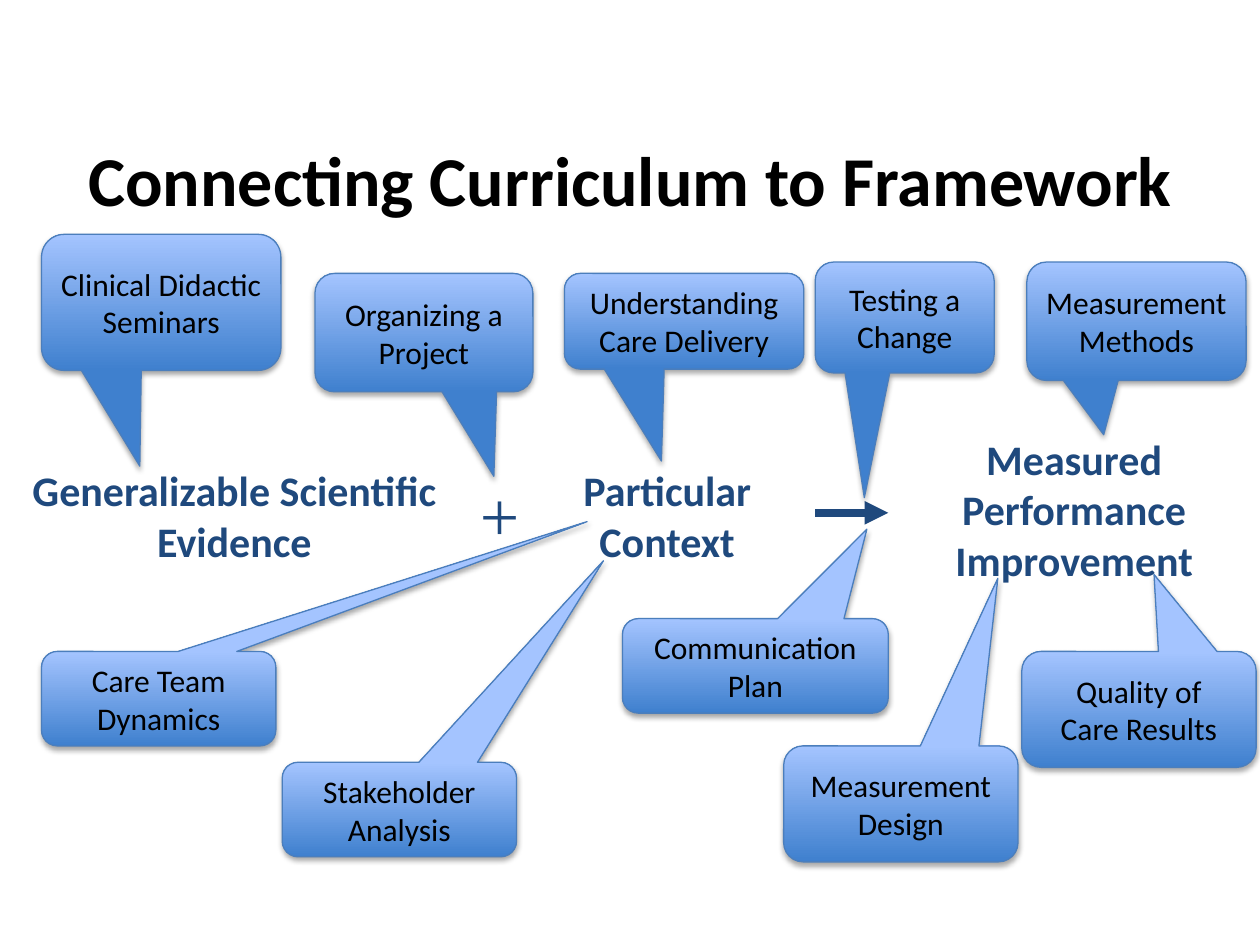
from lxml.etree import SubElement
from pptx import Presentation
from pptx.dml.color import RGBColor
from pptx.enum.shapes import MSO_CONNECTOR, MSO_SHAPE
from pptx.enum.text import MSO_ANCHOR, PP_ALIGN
from pptx.oxml.ns import qn
from pptx.util import Inches, Pt

NAVY, BLACK = "1F497D", "000000"
CALLOUT_BOTTOM, CALLOUT_TOP, CALLOUT_EDGE = "3F80CE", "A4C4FF", "4B7EBC"

# text, left, top, width, height, pointer tip
CALLOUTS = [
    ("Testing a\nChange", 6.47, 2.08, 1.42, 0.88, (6.86, 3.95)),
    ("Measurement Design", 6.22, 5.92, 1.86, 0.92, (7.92, 4.59)),
    ("Quality of\nCare Results", 8.11, 5.17, 1.86, 0.92, (9.16, 4.56)),
    ("Measurement\nMethods", 8.15, 2.08, 1.74, 0.94, (8.76, 3.45)),
    ("Organizing a\nProject", 2.5, 2.17, 1.73, 0.94, (3.92, 3.78)),
    ("Clinical Didactic\nSeminars", 0.33, 1.86, 1.9, 1.08, (1.11, 3.7)),
    ("Understanding\nCare Delivery", 4.48, 2.17, 1.9, 0.76, (5.25, 3.66)),
    ("Stakeholder\nAnalysis", 2.24, 6.05, 1.86, 0.75, (4.79, 4.45)),
    ("Care Team\nDynamics", 0.33, 5.17, 1.86, 0.75, (4.66, 4.14)),
    ("Communication\nPlan", 4.94, 4.91, 2.11, 0.75, (6.88, 4.2)),
]


def rgb(color):
    return RGBColor.from_string(color)


def write(frame, text, size, color, bold=False, font="Calibri", align=PP_ALIGN.CENTER):
    frame.text = text
    for paragraph in frame.paragraphs:
        paragraph.alignment = align
        paragraph.font.name = font
        paragraph.font.size = Pt(size)
        paragraph.font.bold = bold
        paragraph.font.color.rgb = rgb(color)


def add_title(slide, left, top, width, height):
    title = slide.shapes.title
    title.left, title.top = Inches(left), Inches(top)
    title.width, title.height = Inches(width), Inches(height)
    title.text_frame.vertical_anchor = MSO_ANCHOR.MIDDLE
    write(title.text_frame, "Connecting Curriculum to Framework", 40, BLACK, bold=True)


def add_term(shapes, text, left, top, width, height, wrap=True, size=24, **style):
    term = shapes.add_textbox(Inches(left), Inches(top), Inches(width), Inches(height))
    term.text_frame.word_wrap = wrap
    write(term.text_frame, text, size, NAVY, **style)


def add_arrow(shapes, left, right, y):
    arrow = shapes.add_connector(
        MSO_CONNECTOR.STRAIGHT, Inches(left), Inches(y), Inches(right), Inches(y))
    arrow.line.color.rgb = rgb(NAVY)
    arrow.line.width = Pt(4.5)
    SubElement(arrow.line._get_or_add_ln(), qn("a:tailEnd"), type="triangle")
    SubElement(arrow._element.spPr, qn("a:effectLst"))


def add_framework(slide, left, top):
    """Equation: evidence + context -> improvement."""
    shapes = slide.shapes.add_group_shape().shapes
    middle = top + 0.25
    add_term(shapes, "Generalizable Scientific Evidence", left, middle, 3.58, 0.91, bold=True)
    add_term(shapes, "+", left + 3.64, top + 0.3, 0.52, 0.78, wrap=False, size=40,
             font="Times New Roman", align=PP_ALIGN.LEFT)
    add_term(shapes, "Particular\nContext", left + 4.45, middle, 1.55, 0.91,
             wrap=False, bold=True)
    add_arrow(shapes, left + 6.4, left + 6.98, top + 0.68)
    add_term(shapes, "Measured Performance\nImprovement", left + 7.08, top, 2.75, 1.31,
             bold=True)


def add_shadow(shape):
    shape.shadow.inherit = False
    effects = shape._element.spPr.find(qn("a:effectLst"))
    shadow = SubElement(effects, qn("a:outerShdw"), blurRad=str(Pt(3.1)),
                        dist=str(Pt(1.8)), dir="5400000", rotWithShape="0")
    color = SubElement(shadow, qn("a:srgbClr"), val=BLACK)
    SubElement(color, qn("a:alpha"), val="35000")


def add_callout(slide, text, left, top, width, height, tip):
    callout = slide.shapes.add_shape(
        MSO_SHAPE.ROUNDED_RECTANGULAR_CALLOUT,
        Inches(left), Inches(top), Inches(width), Inches(height))
    # The pointer is measured from the centre, in shares of the box size
    callout.adjustments[0] = (tip[0] - left) / width - 0.5
    callout.adjustments[1] = (tip[1] - top) / height - 0.5

    callout.fill.gradient()
    callout.fill.gradient_angle = 90
    for stop, color in zip(callout.fill.gradient_stops, (CALLOUT_BOTTOM, CALLOUT_TOP)):
        stop.color.rgb = rgb(color)
    callout.line.color.rgb = rgb(CALLOUT_EDGE)
    callout.line.width = Pt(0.75)
    add_shadow(callout)

    callout.text_frame.word_wrap = True
    callout.text_frame.vertical_anchor = MSO_ANCHOR.MIDDLE
    write(callout.text_frame, text, 18, BLACK)


def main():
    presentation = Presentation()
    presentation.slide_width, presentation.slide_height = Inches(10), Inches(7.5)
    slide = presentation.slides.add_slide(presentation.slide_layouts[5])
    add_title(slide, 0, 1, 10, 0.83)
    add_framework(slide, 0.07, 3.39)
    for callout in CALLOUTS:
        add_callout(slide, *callout)
    presentation.save("out.pptx")


if __name__ == "__main__":
    main()
